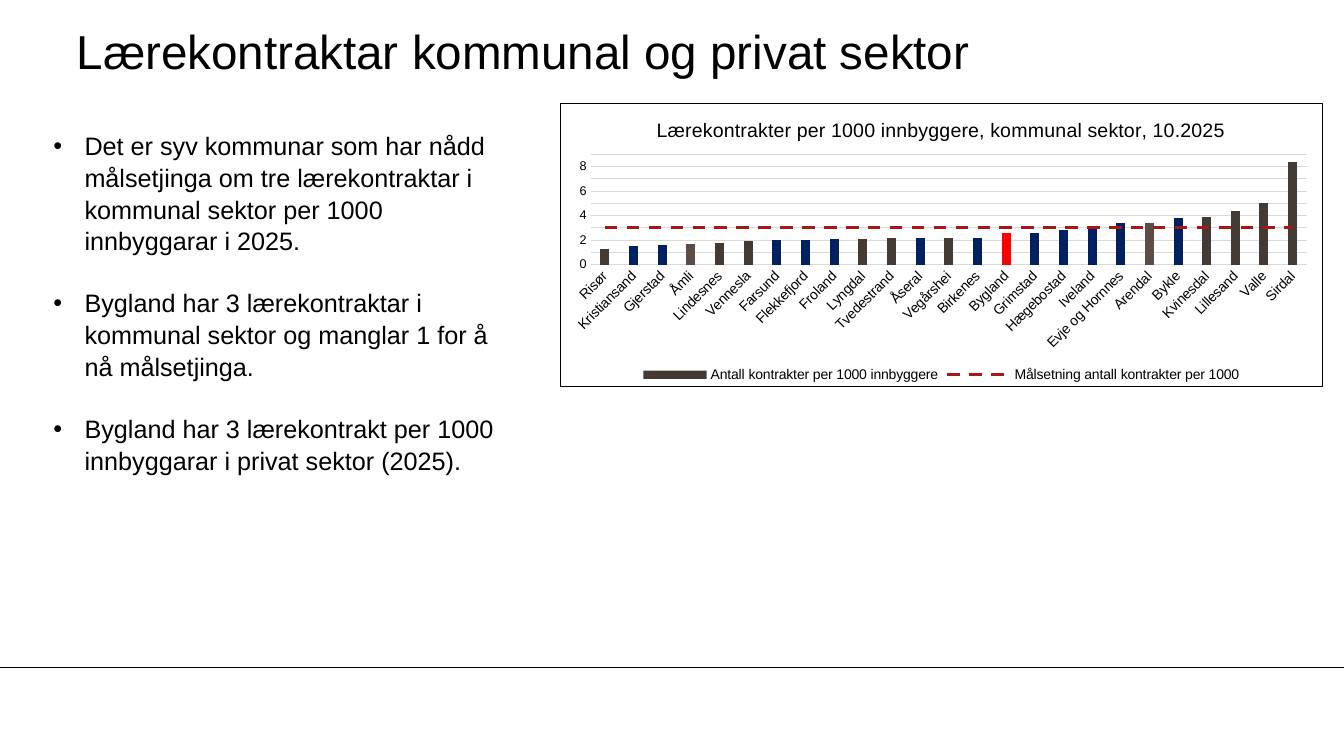
from lxml.etree import SubElement
from pptx import Presentation
from pptx.chart.data import CategoryChartData
from pptx.dml.color import RGBColor
from pptx.enum.chart import (XL_CHART_TYPE, XL_LEGEND_POSITION, XL_MARKER_STYLE,
                             XL_TICK_MARK)
from pptx.enum.dml import MSO_LINE
from pptx.enum.shapes import MSO_CONNECTOR
from pptx.enum.text import MSO_ANCHOR, MSO_AUTO_SIZE, PP_ALIGN
from pptx.oxml import parse_xml
from pptx.oxml.ns import nsdecls, qn
from pptx.util import Pt

PX = 9144  # 100 px to the inch
WIDE, HIGH = 1333, 750
FACE = "Arial"
HUES = {"text": "000000", "grid": "D9D9D9", "bar": "443A34", "navy": "002060",
        "brown": "5B4D46", "own": "FF0000", "goal": "A71716"}

TITLE = "Lærekontraktar kommunal og privat sektor"
POINTS = [
    "Det er syv kommunar som har nådd målsetjinga om tre lærekontraktar i "
    "kommunal sektor per 1000 innbyggarar i 2025.",
    "Bygland har 3 lærekontraktar i kommunal sektor og manglar 1 for å nå målsetjinga.",
    "Bygland har 3 lærekontrakt per 1000 innbyggarar i privat sektor (2025).",
]
HEAD = "Lærekontrakter per 1000 innbyggere, kommunal sektor, 10.2025"
RATES = {
    "Risør": 1.3, "Kristiansand": 1.5, "Gjerstad": 1.6, "Åmli": 1.7,
    "Lindesnes": 1.8, "Vennesla": 1.9, "Farsund": 2, "Flekkefjord": 2,
    "Froland": 2.1, "Lyngdal": 2.1, "Tvedestrand": 2.2, "Åseral": 2.2,
    "Vegårshei": 2.2, "Birkenes": 2.2, "Bygland": 2.6, "Grimstad": 2.6,
    "Hægebostad": 2.8, "Iveland": 2.9, "Evje og Hornnes": 3.4, "Arendal": 3.4,
    "Bykle": 3.8, "Kvinesdal": 3.9, "Lillesand": 4.4, "Valle": 5, "Sirdal": 8.4,
}
GOAL = 3
MARKS = {
    "navy": ["Kristiansand", "Gjerstad", "Farsund", "Flekkefjord", "Froland",
             "Åseral", "Birkenes", "Grimstad", "Hægebostad", "Iveland",
             "Evje og Hornnes", "Bykle"],
    "brown": ["Åmli", "Arendal"],
    "own": ["Bygland"],
}


def emu(*sizes):
    return [round(size * PX) for size in sizes]


def rgb(hue):
    return RGBColor.from_string(HUES[hue])


def put(item, **values):
    for name, value in values.items():
        setattr(item, name, value)


def style(font, size):
    put(font, name=FACE, size=Pt(size), bold=False)
    font.color.rgb = rgb("text")


def stroke(line, hue, width=0.75):
    line.color.rgb = rgb(hue)
    line.width = Pt(width)


def fill(item, hue):
    item.format.fill.solid()
    item.format.fill.fore_color.rgb = rgb(hue)


def add_title(slide, box):
    shape = slide.shapes.title
    put(shape, **dict(zip(("left", "top", "width", "height"), emu(*box))))
    frame = shape.text_frame
    put(frame, margin_left=0, margin_top=0, margin_right=0, margin_bottom=0,
        vertical_anchor=MSO_ANCHOR.MIDDLE, auto_size=MSO_AUTO_SIZE.NONE,
        word_wrap=True, text=TITLE)
    frame.paragraphs[0].alignment = PP_ALIGN.LEFT
    style(frame.paragraphs[0].font, 34)


def add_points(slide, box):
    frame = slide.shapes.add_textbox(*emu(*box)).text_frame
    frame.word_wrap = True
    indent = emu(31)[0]
    for i, text in enumerate(POINTS):
        para = frame.paragraphs[0] if i == 0 else frame.add_paragraph()
        para.text = text
        para.line_spacing = 1.05
        if i:
            para.space_before = Pt(21.7)
        props = para._p.get_or_add_pPr()
        props.set("marL", str(indent))
        props.set("indent", str(-indent))
        SubElement(props, qn("a:buFont")).set("typeface", FACE)
        SubElement(props, qn("a:buChar")).set("char", "•")
        style(para.font, 18)


def split_line(chart):
    """Move the second bar series to a line plot on the same axes."""
    bars = chart.plots[0]._element
    goal = bars.findall(qn("c:ser"))[1]
    for flag in goal.findall(qn("c:invertIfNegative")):
        goal.remove(flag)
    line = parse_xml(f'<c:lineChart {nsdecls("c")}><c:grouping val="standard"/>'
                     '<c:varyColors val="0"/></c:lineChart>')
    line.append(goal)
    SubElement(line, qn("c:marker")).set("val", "1")
    for axis in bars.findall(qn("c:axId")):
        SubElement(line, qn("c:axId")).set("val", axis.get("val"))
    bars.addnext(line)
    return chart.plots[1].series[0]


def place_plot(chart, **share):
    """Fix the inner plot area as shares of the chart's size."""
    area = chart._chartSpace.chart.plotArea
    for old in area.findall(qn("c:layout")):
        area.remove(old)
    layout = parse_xml(f'<c:layout {nsdecls("c")}><c:manualLayout>'
                       '<c:layoutTarget val="inner"/><c:xMode val="edge"/>'
                       '<c:yMode val="edge"/></c:manualLayout></c:layout>')
    for name, value in share.items():
        SubElement(layout[0], qn(f"c:{name}")).set("val", str(value))
    area.insert(0, layout)


def add_border(chart):
    chart._chartSpace.chart.addnext(parse_xml(
        f'<c:spPr {nsdecls("c", "a")}><a:noFill/><a:ln w="9525"><a:solidFill>'
        f'<a:srgbClr val="{HUES["text"]}"/></a:solidFill></a:ln></c:spPr>'))


def format_axes(chart):
    cats, vals = chart.category_axis, chart.value_axis
    for axis, size in ((cats, 10), (vals, 9)):
        put(axis, major_tick_mark=XL_TICK_MARK.NONE, minor_tick_mark=XL_TICK_MARK.NONE)
        style(axis.tick_labels.font, size)
    stroke(cats.format.line, "grid")
    cats._element.find(qn("c:txPr")).find(qn("a:bodyPr")).set("rot", "-2700000")
    put(vals, minimum_scale=0, maximum_scale=9, major_unit=1, has_major_gridlines=True)
    put(vals.tick_labels, number_format="0", number_format_is_linked=False)
    vals.format.line.fill.background()
    stroke(vals.major_gridlines.format.line, "grid")


def add_rates(slide, box):
    data = CategoryChartData()
    data.categories = list(RATES)
    data.add_series("Antall kontrakter per 1000 innbyggere", list(RATES.values()))
    data.add_series("Målsetning antall kontrakter per 1000", [GOAL] * len(RATES))
    chart = slide.shapes.add_chart(XL_CHART_TYPE.COLUMN_CLUSTERED, *emu(*box), data).chart
    style(chart.font, 10)
    chart.has_title = True
    chart.chart_title.text_frame.text = HEAD
    style(chart.chart_title.text_frame.paragraphs[0].font, 14)
    chart.has_legend = True
    put(chart.legend, position=XL_LEGEND_POSITION.BOTTOM, include_in_layout=False)
    style(chart.legend.font, 10)

    goal = split_line(chart)
    goal.smooth = False
    goal.marker.style = XL_MARKER_STYLE.NONE
    stroke(goal.format.line, "goal", 2.25)
    goal.format.line.dash_style = MSO_LINE.DASH

    plot = chart.plots[0]
    put(plot, gap_width=219, overlap=-27, vary_by_categories=False)
    bars = plot.series[0]
    fill(bars, "bar")
    names = list(RATES)
    for hue, towns in MARKS.items():
        for town in towns:
            fill(bars.points[names.index(town)], hue)

    format_axes(chart)
    place_plot(chart, x=0.04, y=0.18, w=0.94, h=0.39)
    add_border(chart)


def add_rule(slide, y):
    rule = slide.shapes.add_connector(MSO_CONNECTOR.STRAIGHT, *emu(0, y, WIDE, y))
    stroke(rule.line, "text")
    SubElement(rule._element.spPr, qn("a:effectLst"))


def main():
    deck = Presentation()
    deck.slide_width, deck.slide_height = emu(WIDE, HIGH)
    slide = deck.slides.add_slide(deck.slide_layouts[5])
    add_rule(slide, 662)
    add_title(slide, (76, 13, 1110, 75))
    add_points(slide, (43, 123, 475, 374))
    add_rates(slide, (555, 102, 757, 282))
    deck.save("out.pptx")


if __name__ == "__main__":
    main()
